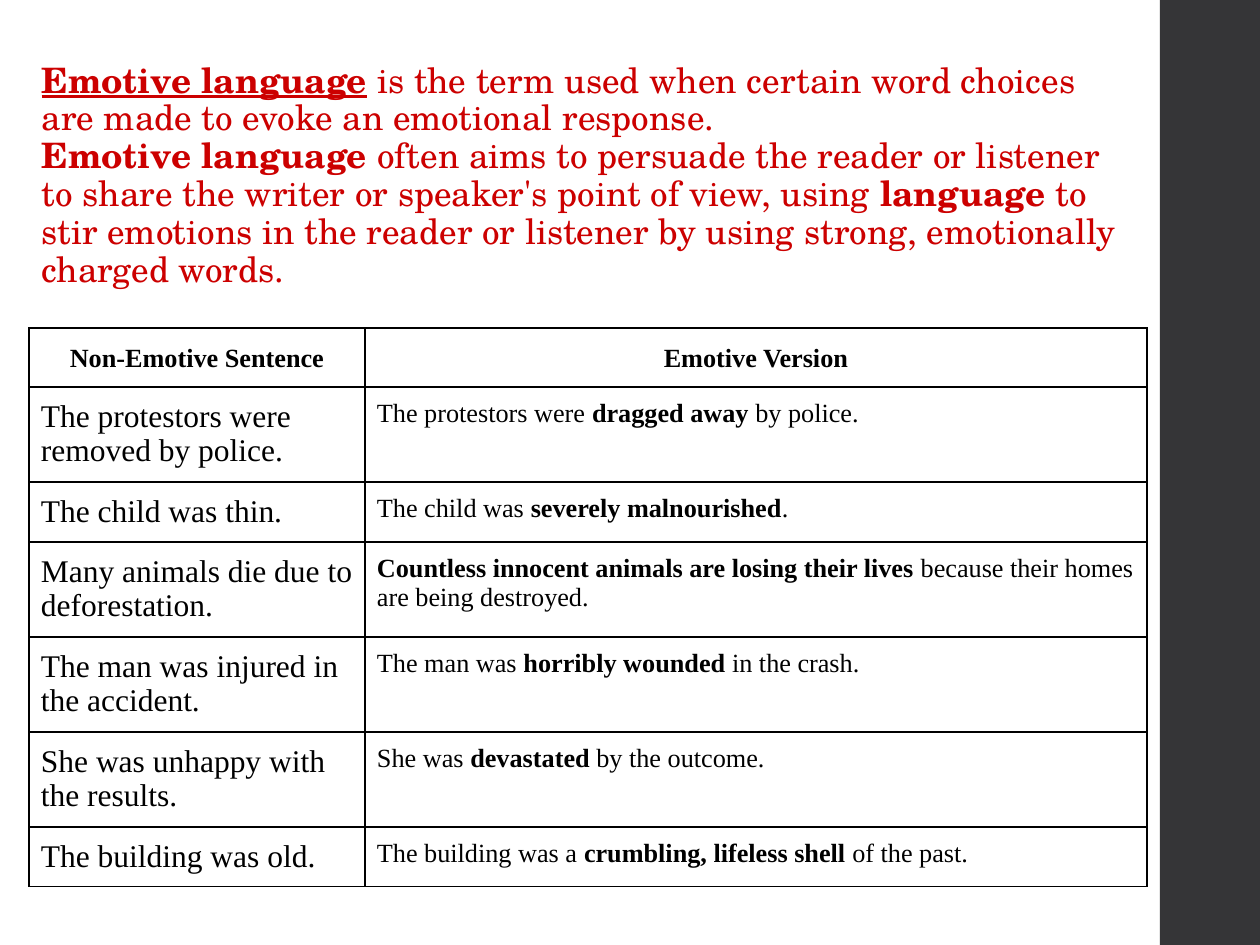
"""Build a slide that defines emotive language and compares plain and emotive sentences."""
from lxml.etree import SubElement
from pptx import Presentation
from pptx.dml.color import RGBColor
from pptx.enum.shapes import MSO_SHAPE
from pptx.enum.text import MSO_ANCHOR, MSO_AUTO_SIZE, PP_ALIGN
from pptx.oxml.ns import qn
from pptx.util import Pt

PX = 914400 / 126


def color(hex_string):
    return RGBColor.from_string(hex_string)


def write(paragraph, marked_text, font_name, size, hex_string):
    """Add runs, with the parts between asterisks in bold."""
    for index, part in enumerate(marked_text.split("*")):
        if part:
            run = paragraph.add_run()
            run.text = part
            font_format = {"name": font_name, "size": Pt(size), "bold": index % 2 == 1}
            for attribute, value in font_format.items():
                setattr(run.font, attribute, value)
            run.font.color.rgb = color(hex_string)


definitions = [
    "*Emotive language* is the term used when certain word choices are made "
    "to evoke an emotional response.",
    "*Emotive language* often aims to persuade the reader or listener to share the "
    "writer or speaker's point of view, using *language *to stir emotions in the "
    "reader or listener by using strong, emotionally charged words.",
]
sentences = [
    ("*Non-Emotive Sentence*", "*Emotive Version*", 59),
    ("The protestors were removed by police.",
     "The protestors were *dragged away* by police.", 95),
    ("The child was thin.", "The child was *severely malnourished*.", 60),
    ("Many animals die due to deforestation.",
     "*Countless innocent animals are losing their lives* because their homes "
     "are being destroyed.", 95),
    ("The man was injured in the accident.",
     "The man was *horribly wounded* in the crash.", 95),
    ("She was unhappy with the results.", "She was *devastated* by the outcome.", 95),
    ("The building was old.",
     "The building was a *crumbling, lifeless shell* of the past.", 60),
]
column_widths = [336, 782]

presentation = Presentation()
presentation.slide_width = round(1260 * PX)
presentation.slide_height = round(945 * PX)
slide = presentation.slides.add_slide(presentation.slide_layouts[5])

sidebar = slide.shapes.add_shape(
    MSO_SHAPE.RECTANGLE, *(round(n * PX) for n in (1160, 0, 100, 945)))
sidebar.shadow.inherit = False
sidebar.fill.solid()
sidebar.fill.fore_color.rgb = color("353537")
sidebar.line.fill.background()

definition = slide.shapes.title
place = {"left": -66 + 95, "top": -66, "width": 1119, "height": 362}
for attribute, value in place.items():
    setattr(definition, attribute, round(value * PX))
definition_frame = definition.text_frame
frame_format = {"word_wrap": True, "auto_size": MSO_AUTO_SIZE.NONE,
                "vertical_anchor": MSO_ANCHOR.BOTTOM}
for attribute, value in frame_format.items():
    setattr(definition_frame, attribute, value)
for index, definition_text in enumerate(definitions):
    paragraph = definition_frame.add_paragraph() if index else definition_frame.paragraphs[0]
    paragraph_format = {"alignment": PP_ALIGN.LEFT, "line_spacing": 0.9,
                        "space_before": Pt(0)}
    for attribute, value in paragraph_format.items():
        setattr(paragraph, attribute, value)
    write(paragraph, definition_text, "TeX Gyre Schola", 20, "CC0000")
definition_frame.paragraphs[0].runs[0].font.underline = True

comparison = slide.shapes.add_table(
    len(sentences), len(column_widths),
    *(round(n * PX) for n in (29, 328, sum(column_widths), 559))).table
comparison.first_row = False
comparison.horz_banding = False
for column, width in zip(comparison.columns, column_widths):
    column.width = round(width * PX)

cell_format = {f"margin_{side}": round(12 * PX) for side in ("left", "right", "top", "bottom")}
for row_index, (plain, emotive, height) in enumerate(sentences):
    comparison.rows[row_index].height = round(height * PX)
    for column_index, sentence in enumerate((plain, emotive)):
        cell = comparison.cell(row_index, column_index)
        for attribute, value in cell_format.items():
            setattr(cell, attribute, value)
        properties = cell._tc.get_or_add_tcPr()
        for edge in ("a:lnL", "a:lnR", "a:lnT", "a:lnB"):
            border = SubElement(properties, qn(edge), w=str(Pt(0.75)))
            border_fill = SubElement(border, qn("a:solidFill"))
            SubElement(border_fill, qn("a:srgbClr"), val="000000")
        cell.fill.background()
        paragraph = cell.text_frame.paragraphs[0]
        if row_index == 0:
            paragraph.alignment = PP_ALIGN.CENTER
            paragraph.line_spacing = 1.15
        size = 18 if row_index and column_index == 0 else 15
        write(paragraph, sentence, "Times New Roman", size, "000000")

presentation.save("out.pptx")
